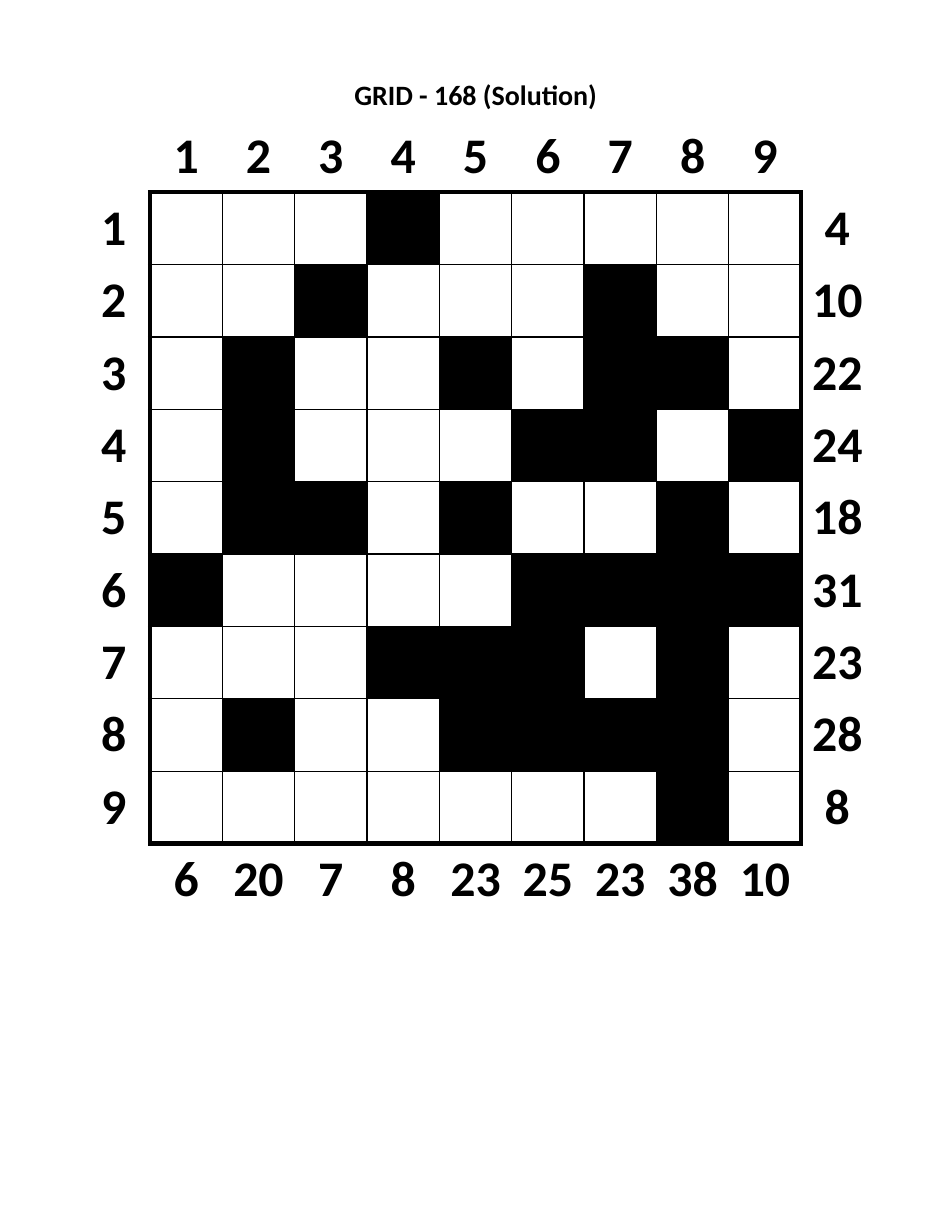
import dataclasses
import lxml.etree
import pptx
import pptx.dml.color
import pptx.enum.text
import pptx.oxml.ns
import pptx.util

Cm, Pt = pptx.util.Cm, pptx.util.Pt
RGB = pptx.dml.color.RGBColor


@dataclasses.dataclass(frozen=True)
class Theme:
    face: str = "Calibri"
    ink: str = "000000"
    paper: str = "FFFFFF"
    head: int = 18
    label: int = 32
    thin: int = 1
    thick: int = 3


THEME = Theme()
TITLE = "GRID - 168 (Solution)"
# Solution rows, with # for a black square
BOARD = [
    "...#.....",
    "..#...#..",
    ".#..#.##.",
    ".#...##.#",
    ".##.#..#.",
    "#....####",
    "...###.#.",
    ".#..####.",
    ".......#.",
]
SIZE = len(BOARD)
LAST = SIZE + 1
SIDES = {"L": (0, -1), "R": (0, 1), "T": (-1, 0), "B": (1, 0)}


def write(frame, text, size):
    line = frame.paragraphs[0]
    line.text = text
    line.alignment = pptx.enum.text.PP_ALIGN.CENTER
    font = line.font
    font.name, font.size, font.bold = THEME.face, Pt(size), True
    font.color.rgb = RGB.from_string(THEME.ink)


def inside(row, col):
    return 0 < row < LAST and 0 < col < LAST


def black(row, col):
    return inside(row, col) and BOARD[row - 1][col - 1] == "#"


def label(row, col):
    """Numbers at top and left; sums of black positions at right and bottom."""
    if inside(row, col) or (row in (0, LAST) and col in (0, LAST)):
        return ""
    if row == 0 or col == 0:
        return str(row + col)
    if col == LAST:
        return str(sum(n for n in range(1, LAST) if black(row, n)))
    return str(sum(n for n in range(1, LAST) if black(n, col)))


def border(cell, row, col):
    """Thin lines within the board, a thick rim, none elsewhere."""
    props = cell._tc.get_or_add_tcPr()
    qn = pptx.oxml.ns.qn
    for side, (down, right) in SIDES.items():
        count = inside(row, col) + inside(row + down, col + right)
        line = lxml.etree.SubElement(props, qn("a:ln" + side))
        if count == 0:
            lxml.etree.SubElement(line, qn("a:noFill"))
            continue
        width = THEME.thin if count == 2 else THEME.thick
        line.set("w", str(Pt(width)))
        fill = lxml.etree.SubElement(line, qn("a:solidFill"))
        lxml.etree.SubElement(fill, qn("a:srgbClr"), val=THEME.ink)


def title(slide, left, top, width, height):
    frame = slide.shapes.add_textbox(left, top, width, height).text_frame
    frame.word_wrap = True
    frame.margin_left = frame.margin_right = 0
    frame.margin_top = frame.margin_bottom = 0
    write(frame, TITLE, THEME.head)


def puzzle(slide, left, top, side):
    count = LAST + 1
    table = slide.shapes.add_table(count, count, left, top, side, side).table
    table.first_row = table.horz_banding = False
    for band in [*table.rows]:
        band.height = side // count
    for band in table.columns:
        band.width = side // count
    for row in range(count):
        for col in range(count):
            cell = table.cell(row, col)
            cell.margin_left = cell.margin_right = 0
            cell.margin_top = cell.margin_bottom = 0
            cell.vertical_anchor = pptx.enum.text.MSO_ANCHOR.MIDDLE
            border(cell, row, col)
            cell.fill.solid()
            tone = THEME.ink if black(row, col) else THEME.paper
            cell.fill.fore_color.rgb = RGB.from_string(tone)
            text = label(row, col)
            if text:
                write(cell.text_frame, text, THEME.label)


def main():
    deck = pptx.Presentation()
    deck.slide_width, deck.slide_height = Cm(21.59), Cm(27.94)
    slide = deck.slides.add_slide(deck.slide_layouts[6])
    left, side = Cm(1.76), Cm(18.06)
    title(slide, left, Cm(1.76), side, Cm(0.76))
    puzzle(slide, left, Cm(2.72), side)
    deck.save("out.pptx")


if __name__ == "__main__":
    main()
